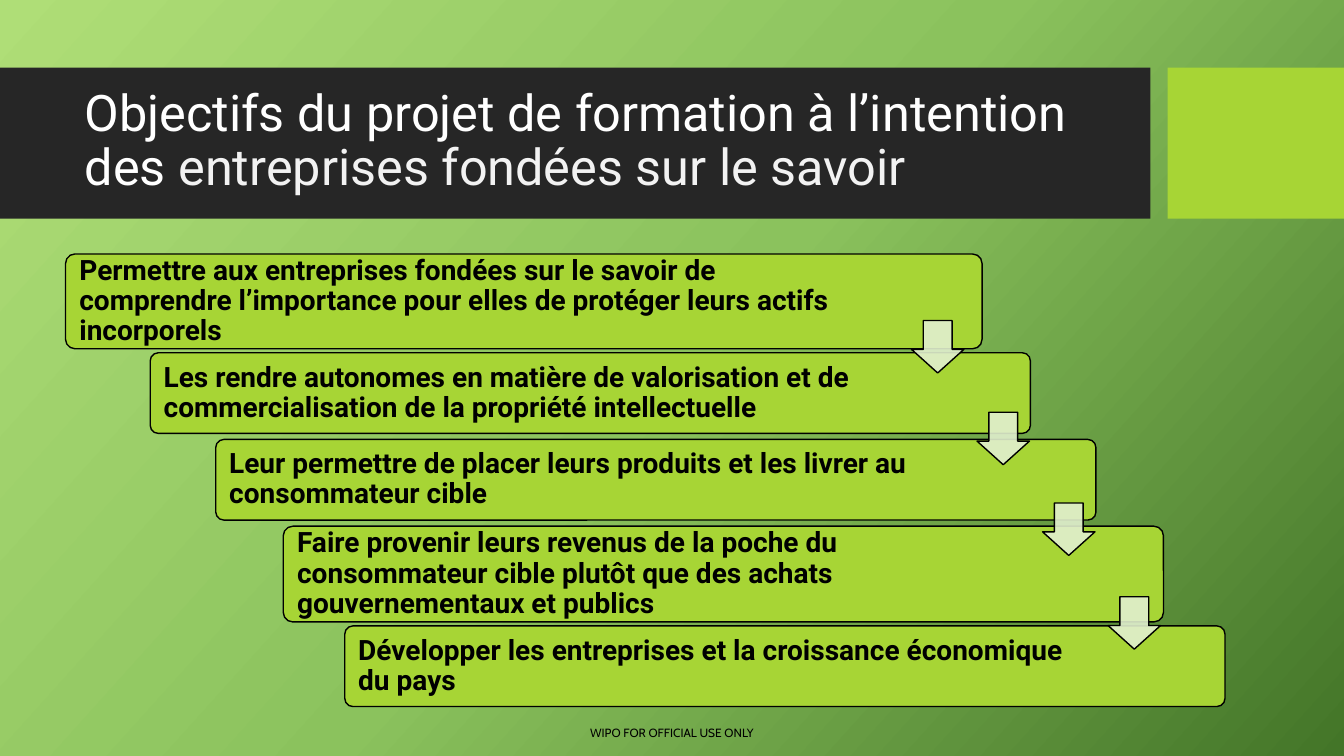
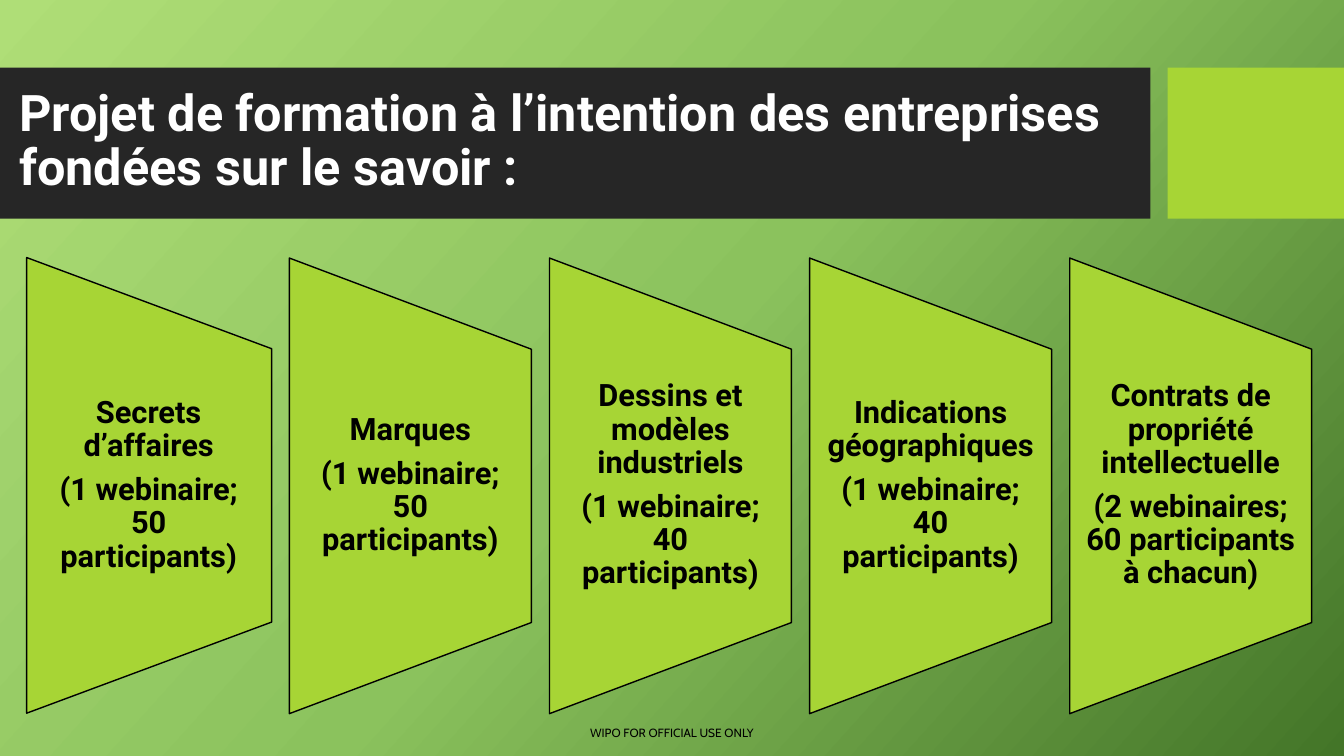
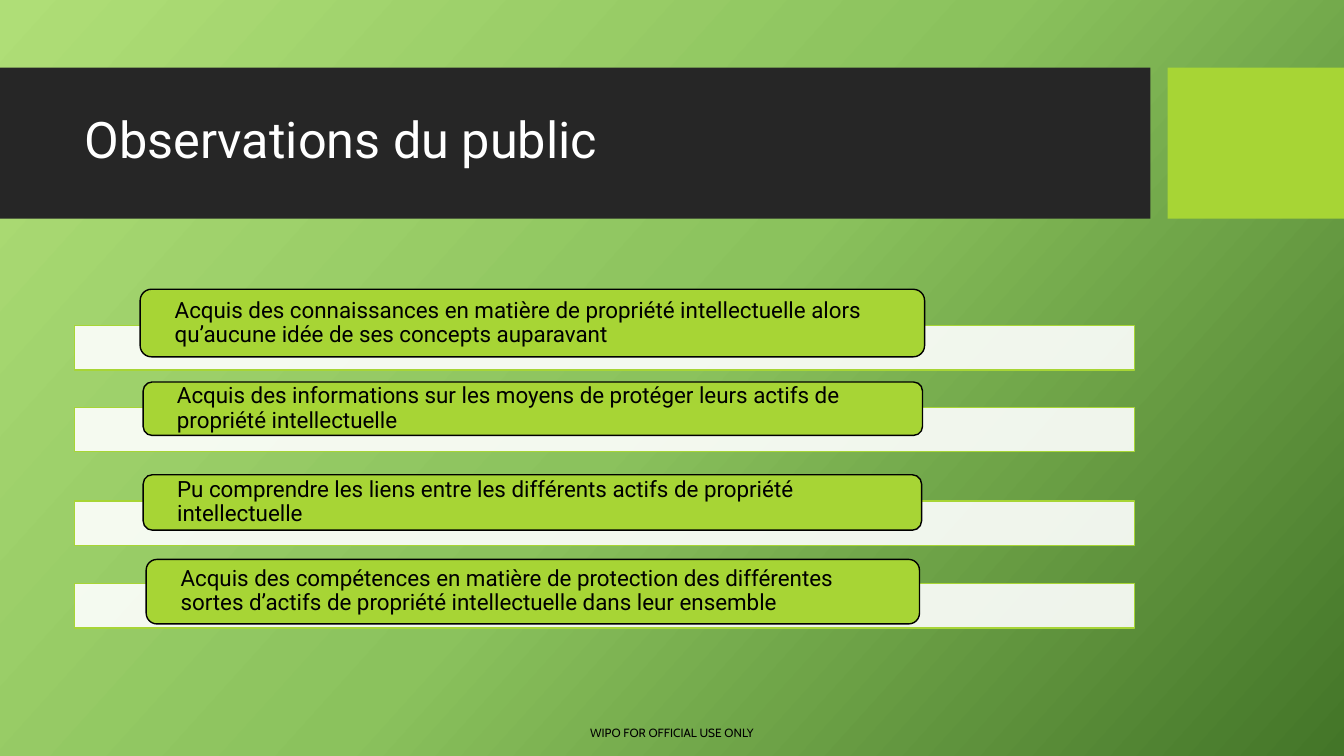
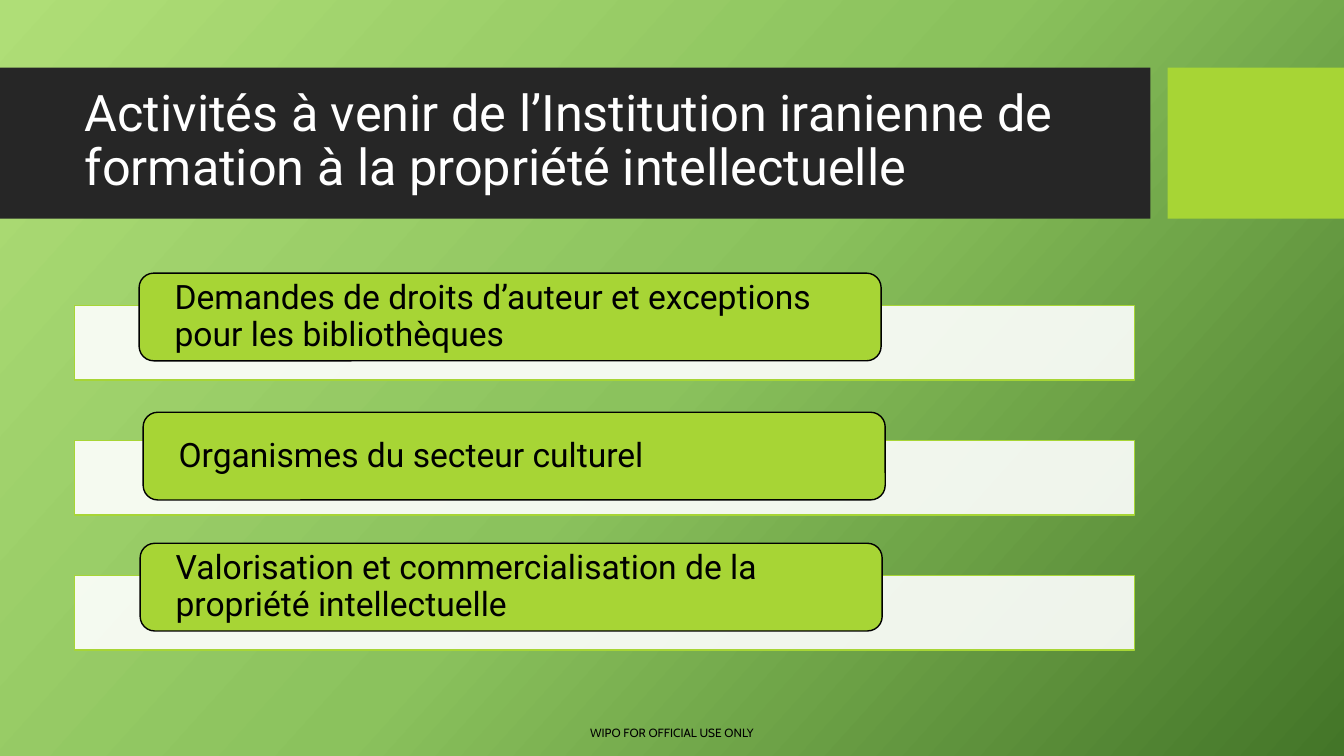
from copy import deepcopy

from lxml import etree
from pptx import Presentation
from pptx.dml.color import RGBColor
from pptx.enum.shapes import MSO_SHAPE
from pptx.enum.text import MSO_ANCHOR, MSO_AUTO_SIZE, PP_ALIGN
from pptx.oxml.ns import qn
from pptx.util import Pt

RECTANGLE = MSO_SHAPE.RECTANGLE
ROUNDED = MSO_SHAPE.ROUNDED_RECTANGLE
DOWN_ARROW = MSO_SHAPE.DOWN_ARROW
TRAPEZOID = MSO_SHAPE.FLOWCHART_MANUAL_OPERATION
MIDDLE = MSO_ANCHOR.MIDDLE
TOP = MSO_ANCHOR.TOP
NO_AUTOFIT = MSO_AUTO_SIZE.NONE
LEFT = PP_ALIGN.LEFT
CENTER = PP_ALIGN.CENTER

PX = 9144
WIDTH, HEIGHT = 1333, 750
TITLE_ONLY = 5
SIDES = ("margin_left", "margin_top", "margin_right", "margin_bottom")

COLORS = {
    "light": "AFDE77",
    "middle": "8BC25D",
    "dark": "437528",
    "band": "262626",
    "lime": "A7D535",
    "pale": "E1EFCE",
    "white": "FFFFFF",
    "soft": "F2F2F2",
    "black": "000000",
}

FONTS = {
    "title": {"name": "Roboto", "size": Pt(36), "bold": False},
    "bold title": {"name": "Roboto", "size": Pt(36), "bold": True},
    "step": {"name": "Roboto", "size": Pt(20), "bold": True},
    "card": {"name": "Roboto", "size": Pt(22), "bold": True},
    "remark": {"name": "Roboto", "size": Pt(16)},
    "activity": {"name": "Roboto", "size": Pt(24)},
    "footer": {"name": "Cabin", "size": Pt(8.5)},
}

STEPS = [
    (65, 252, 909, 94, 106, "Permettre aux entreprises fondées sur le savoir de comprendre "
     "l’importance pour elles de protéger leurs actifs incorporels"),
    (149, 350, 873, 80, 129, "Les rendre autonomes en matière de valorisation et de "
     "commercialisation de la propriété intellectuelle"),
    (214, 436, 873, 80, 129, "Leur permettre de placer leurs produits et les livrer au "
     "consommateur cible"),
    (281, 522, 873, 95, 129, "Faire provenir leurs revenus de la poche du consommateur cible "
     "plutôt que des achats gouvernementaux et publics"),
    (342, 621, 873, 80, 129, "Développer les entreprises et la croissance économique du pays"),
]
ARROW_TOPS = (318, 409, 499, 592)

CARDS = [
    (243, ["Secrets d’affaires", "(1 webinaire;", "50", "participants)"]),
    (240, ["Marques", "(1 webinaire; 50 participants)"]),
    (240, ["Dessins et modèles industriels", "(1 webinaire; 40 participants)"]),
    (240, ["Indications géographiques", "(1 webinaire; 40 participants)"]),
    (240, ["Contrats de propriété intellectuelle", "(2 webinaires; 60 participants à chacun)"]),
]

REMARKS = [
    (323, (139, 287, 778, 67), "Acquis des connaissances en matière de propriété "
     "intellectuelle alors qu’aucune idée de ses concepts auparavant"),
    (404, (142, 379, 773, 53), "Acquis des informations sur les moyens de protéger leurs "
     "actifs de propriété intellectuelle"),
    (497, (142, 471, 772, 55), "Pu comprendre les liens entre les différents actifs de "
     "propriété intellectuelle"),
    (579, (145, 555, 767, 64), "Acquis des compétences en matière de protection des "
     "différentes sortes d’actifs de propriété intellectuelle dans leur ensemble"),
]

ACTIVITIES = [
    (303, (138, 271, 736, 87), "Demandes de droits d’auteur et exceptions pour les "
     "bibliothèques"),
    (437, (142, 409, 736, 87), "Organismes du secteur culturel"),
    (571, (139, 539, 736, 87), "Valorisation et commercialisation de la propriété "
     "intellectuelle"),
]


def rgb(name):
    """Return the named colour."""
    return RGBColor.from_string(COLORS[name])


def emu(*lengths):
    """Turn px lengths into EMU."""
    return [length * PX for length in lengths]


class Deck:
    """Hold the shared style and the current slide."""

    def __init__(self):
        """Open a presentation with a gradient background."""
        self.presentation = Presentation()
        self.presentation.slide_width, self.presentation.slide_height = emu(WIDTH, HEIGHT)
        self.slide = None
        self.set_background()

    def set_background(self):
        """Give the slide master a diagonal gradient of three greens."""
        master = self.presentation.slide_master
        fill = master.background.fill
        fill.gradient()
        fill.gradient_angle = 318
        stop_list = master.element.xpath("./p:cSld/p:bg//a:gsLst")[0]
        stop_list.insert(1, deepcopy(stop_list[0]))
        stops = zip(fill.gradient_stops, ("light", "middle", "dark"), (0, 0.5, 1))
        for stop, color, position in stops:
            stop.color.rgb = rgb(color)
            stop.position = position

    def add_slide(self, *runs, left=74, width=1051, font="title"):
        """Start a slide with its footer, bands and title."""
        layout = self.presentation.slide_layouts[TITLE_ONLY]
        self.slide = self.presentation.slides.add_slide(layout)
        self.text_box((0, 715, WIDTH, 24), ["WIPO FOR OFFICIAL USE ONLY"], "footer",
                      anchor=TOP, align=CENTER, spacing=1)
        self.shape(RECTANGLE, (0, 67, 1141, 150), "band")
        self.shape(RECTANGLE, (1158, 67, WIDTH - 1158, 150), "lime")
        title = self.slide.shapes.title
        title.left, title.top, title.width, title.height = emu(left, 82, width, 118)
        title.element.getparent().append(title.element)
        self.fill_text(title.text_frame, [runs], font)

    def shape(self, kind, box, fill, line=None, alpha=None, adjustments=()):
        """Draw a preset shape."""
        shape = self.slide.shapes.add_shape(kind, *emu(*box))
        shape.shadow.inherit = False
        for index, value in enumerate(adjustments):
            shape.adjustments[index] = value
        shape.fill.solid()
        shape.fill.fore_color.rgb = rgb(fill)
        if alpha:
            color = shape.element.spPr.find(qn("a:solidFill"))[0]
            etree.SubElement(color, qn("a:alpha"), val=str(alpha * 1000))
        if line:
            shape.line.color.rgb = rgb(line)
            shape.line.width = Pt(1)
        else:
            shape.line.fill.background()
        return shape

    def text_box(self, box, paragraphs, font, **formats):
        """Place a text box."""
        text_box = self.slide.shapes.add_textbox(*emu(*box))
        self.fill_text(text_box.text_frame, paragraphs, font, **formats)

    def fill_text(self, frame, paragraphs, font, anchor=MIDDLE, align=LEFT,
                  insets=(10, 5, 10, 5), spacing=0.9, heading_gap=0):
        """Fill a text frame with paragraphs of (text, colour) runs or plain strings."""
        formats = dict(zip(SIDES, emu(*insets)))
        formats.update(word_wrap=True, auto_size=NO_AUTOFIT, vertical_anchor=anchor)
        for name, value in formats.items():
            setattr(frame, name, value)
        for index, content in enumerate(paragraphs):
            paragraph = frame.add_paragraph() if index else frame.paragraphs[0]
            space_after = Pt(0 if index else heading_gap)
            formats = {"alignment": align, "line_spacing": spacing,
                       "space_before": Pt(0), "space_after": space_after}
            for name, value in formats.items():
                setattr(paragraph, name, value)
            runs = [(content, "black")] if isinstance(content, str) else content
            for text, color in runs:
                run = paragraph.add_run()
                run.text = text
                for name, value in FONTS[font].items():
                    setattr(run.font, name, value)
                run.font.color.rgb = rgb(color)

    def step(self, left, top, width, height, right_inset, text):
        """Draw one step of the staircase."""
        shape = self.shape(ROUNDED, (left, top, width, height), "lime", "black",
                           adjustments=(0.1,))
        self.fill_text(shape.text_frame, [text], "step", insets=(11, 8, right_inset, 8))

    def arrow(self, left, top):
        """Draw an arrow from one step to the next."""
        self.shape(DOWN_ARROW, (left, top, 52, 52), "pale", "black", 90, (0.55, 0.45))

    def card(self, left, width, paragraphs):
        """Draw a trapezoid turned on its side, with upright text."""
        top, length = 256, 452
        offset = (length - width) // 2
        shape = self.shape(TRAPEZOID, (left - offset, top + offset, length, width),
                           "lime", "black")
        shape.rotation = 270
        self.text_box((left, 346, width, 271), paragraphs, "card", align=CENTER,
                      insets=(15, 0, 15, 0), heading_gap=7.7)

    def labelled_bar(self, top, height, label_box, text, font):
        """Draw a white bar with a rounded label over it."""
        self.shape(RECTANGLE, (74, top, 1051, height), "white", "lime", 90)
        label = self.shape(ROUNDED, label_box, "lime", "black")
        self.fill_text(label.text_frame, [text], font, insets=(31, 0, 31, 0))


def main():
    """Build the four slides."""
    deck = Deck()

    deck.add_slide(("Objectifs du projet de formation à l’intention des ", "white"),
                   ("entreprises fondées sur le savoir", "soft"))
    for step in STEPS:
        deck.step(*step)
    for index, top in enumerate(ARROW_TOPS):
        deck.arrow(904 + 65 * index, top)

    deck.add_slide(("Projet de formation à l’intention des entreprises "
                    "fondées sur le savoir :", "white"),
                   left=9, width=1117, font="bold title")
    left = 26
    for width, paragraphs in CARDS:
        deck.card(left, width, paragraphs)
        left += width + 18

    deck.add_slide(("Observations du public", "white"))
    for top, label_box, text in REMARKS:
        deck.labelled_bar(top, 44, label_box, text, "remark")

    deck.add_slide(("Activités à venir de l’Institution iranienne de formation "
                    "à la propriété intellectuelle", "white"))
    for top, label_box, text in ACTIVITIES:
        deck.labelled_bar(top, 74, label_box, text, "activity")

    deck.presentation.save("out.pptx")


if __name__ == "__main__":
    main()
